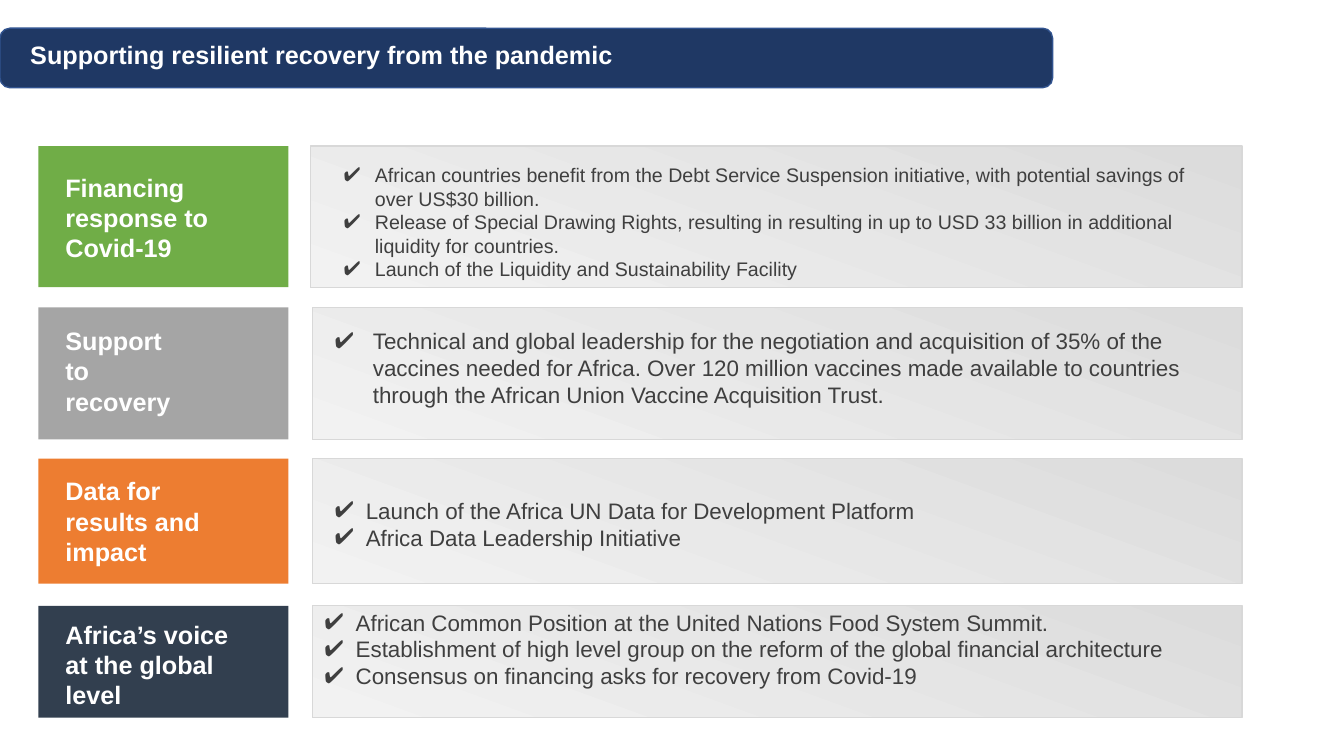
"""Build the slide on supporting resilient recovery from the pandemic."""
import pptx
import pptx.dml.color
import pptx.enum.shapes
import pptx.enum.text
import pptx.oxml
import pptx.oxml.ns
import pptx.util
from pptx.util import Inches

COLORS = {
    "bar": "1F3864", "bar_line": "31538F", "white": "FFFFFF", "body": "3F3F3F",
    "panel_dark": "DCDCDC", "panel_light": "F2F2F2", "panel_line": "D8D8D8",
    "financing": "70AD47", "support": "A5A5A5", "data": "ED7D31", "voice": "323F4F",
}
FONT = "Arial"
TITLE = "Supporting resilient recovery from the pandemic"
THEMES = [
    {"label": "Financing response to Covid-19", "color": "financing",
     "top": 1.45, "height": 1.4, "panel_left": 3.08,
     "label_box": (0.55, 1.66, 1.69, 1.01), "points_box": (3.31, 1.57, 8.62, 1.16),
     "size": 14, "indent": 0.31,
     "points": [
         "African countries benefit from the Debt Service Suspension initiative, "
         "with potential savings of over US$30 billion.",
         "Release of Special Drawing Rights, resulting in resulting in up to USD 33 billion "
         "in additional liquidity for countries.",
         "Launch of the Liquidity and Sustainability Facility"]},
    {"label": "Support to recovery", "color": "support",
     "top": 3.05, "height": 1.31, "panel_left": 3.1,
     "label_box": (0.55, 3.18, 1.45, 1.01), "points_box": (3.22, 3.2, 8.77, 1),
     "size": 16, "indent": 0.38,
     "points": [
         "Technical and global leadership for the negotiation and acquisition of 35% of the "
         "vaccines needed for Africa. Over 120 million vaccines made available to countries "
         "through the African Union Vaccine Acquisition Trust."]},
    {"label": "Data for results and impact", "color": "data",
     "top": 4.55, "height": 1.24, "panel_left": 3.1,
     "label_box": (0.55, 4.67, 1.82, 1.01), "points_box": (3.22, 4.88, 8.77, 0.51),
     "size": 16, "indent": 0.31,
     "points": [
         "Launch of the Africa UN Data for Development Platform",
         "Africa Data Leadership Initiative"]},
    {"label": "Africa’s voice at the global level", "color": "voice",
     "top": 6.01, "height": 1.11, "panel_left": 3.1,
     "label_box": (0.55, 6.09, 1.82, 1.01), "points_box": (3.12, 5.99, 9.2, 1.04),
     "size": 16, "indent": 0.31,
     "points": [
         "African Common Position at the United Nations Food System Summit.",
         "Establishment of high level group on the reform of the global financial architecture",
         "Consensus on financing asks for recovery from Covid-19"]},
]
LABEL_LEFT, LABEL_WIDTH, PANEL_RIGHT = 0.38, 2.48, 12.32


def rgb(name):
    return pptx.dml.color.RGBColor.from_string(COLORS[name])


def add_block(slide, preset, place, fill=None, line=None):
    block = slide.shapes.add_shape(preset, *map(Inches, place))
    block.shadow.inherit = False
    if fill:
        block.fill.solid()
        block.fill.fore_color.rgb = rgb(fill)
    else:
        block.fill.gradient()
        block.fill.gradient_angle = 250
        for stop, shade in zip(block.fill.gradient_stops, ("panel_dark", "panel_light")):
            stop.color.rgb = rgb(shade)
    if line:
        block.line.color.rgb = rgb(line)
        block.line.width = pptx.util.Pt(1)
    else:
        block.line.fill.background()
    return block


def add_check(paragraph, indent):
    properties = paragraph._p.get_or_add_pPr()
    properties.set("marL", str(Inches(indent)))
    properties.set("indent", str(-Inches(indent)))
    namespace = pptx.oxml.ns.nsdecls("a")
    for xml in (f'<a:buClr {namespace}><a:srgbClr val="{COLORS["body"]}"/></a:buClr>',
                f'<a:buFont {namespace} typeface="{FONT}"/>',
                f'<a:buChar {namespace} char="✔"/>'):
        properties.append(pptx.oxml.parse_xml(xml))


def write(frame, lines, size, color, bold=False, indent=None):
    frame.word_wrap = True
    frame.auto_size = pptx.enum.text.MSO_AUTO_SIZE.SHAPE_TO_FIT_TEXT
    frame.vertical_anchor = pptx.enum.text.MSO_ANCHOR.TOP
    for number, line in enumerate(lines):
        paragraph = frame.add_paragraph() if number else frame.paragraphs[0]
        paragraph.alignment = pptx.enum.text.PP_ALIGN.LEFT
        if indent:
            add_check(paragraph, indent)
        run = paragraph.add_run()
        run.text = line
        run.font.name = FONT
        run.font.size = pptx.util.Pt(size)
        run.font.bold = bold
        run.font.color.rgb = rgb(color)


def add_text(slide, place, *content, **style):
    write(slide.shapes.add_textbox(*map(Inches, place)).text_frame, *content, **style)


def main():
    deck = pptx.Presentation()
    deck.slide_width, deck.slide_height = Inches(13.33), Inches(7.5)
    slide = deck.slides.add_slide(deck.slide_layouts[5])
    presets = pptx.enum.shapes.MSO_SHAPE

    bar = add_block(slide, presets.ROUNDED_RECTANGLE, (0, 0.28, 10.44, 0.59), "bar", "bar_line")
    title = slide.shapes.title
    title.left, title.top, title.width, title.height = map(Inches, (0.2, 0.34, 7.6, 0.4))
    write(title.text_frame, [TITLE], 18, "white", bold=True)
    bar.element.addnext(title.element)

    for theme in THEMES:
        top, height, left = theme["top"], theme["height"], theme["panel_left"]
        add_block(slide, presets.RECTANGLE, (left, top, PANEL_RIGHT - left, height),
                  line="panel_line")
        add_text(slide, theme["points_box"], theme["points"], theme["size"], "body",
                 indent=theme["indent"])
        add_block(slide, presets.RECTANGLE, (LABEL_LEFT, top, LABEL_WIDTH, height),
                  theme["color"])
        add_text(slide, theme["label_box"], [theme["label"]], 18, "white", bold=True)

    deck.save("out.pptx")


if __name__ == "__main__":
    main()
